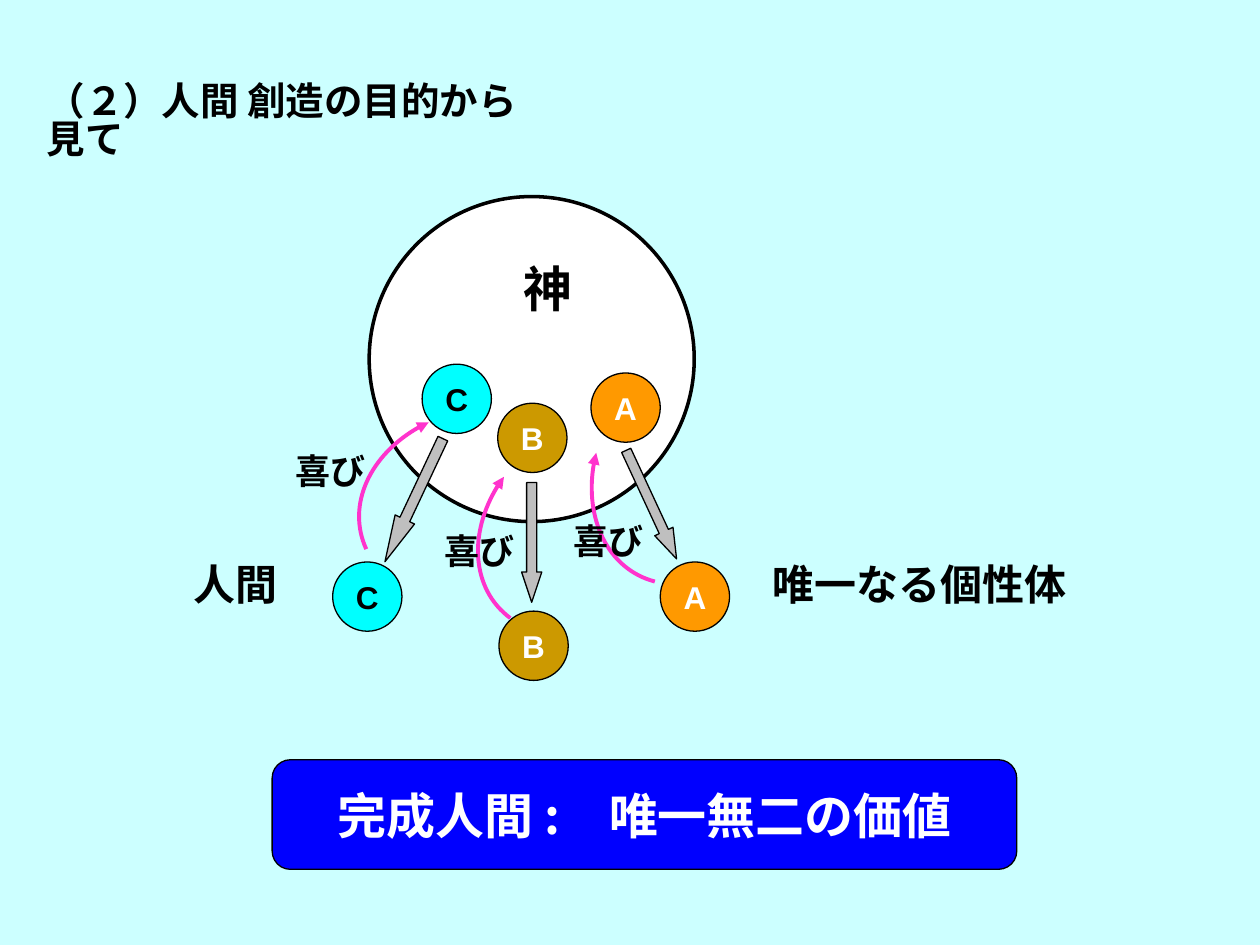
from lxml import etree
from pptx import Presentation
from pptx.dml.color import RGBColor
from pptx.enum.shapes import MSO_SHAPE as Preset
from pptx.enum.text import MSO_ANCHOR as Anchor, MSO_AUTO_SIZE as AutoSize, PP_ALIGN as Align
from pptx.oxml.ns import qn
from pptx.util import Inches, Pt

COLUMNS, ROWS = 100, 75
JAPANESE, LATIN = "Noto Sans CJK JP", "Arial"


def color(value):
    return RGBColor.from_string(value)


def write(shape, text, size=20, font=JAPANESE, ink="000000", align=Align.LEFT,
          anchor=Anchor.TOP, wrap=True, spacing=None):
    frame = shape.text_frame
    frame.auto_size = AutoSize.NONE
    frame.word_wrap = wrap
    frame.vertical_anchor = anchor
    paragraph = frame.paragraphs[0]
    paragraph.alignment = align
    paragraph.line_spacing = spacing
    run = paragraph.add_run()
    run.text = text
    run.font.size = Pt(size)
    run.font.bold = True
    run.font.name = font
    run.font.color.rgb = color(ink)
    etree.SubElement(run.font._element, qn("a:ea")).set("typeface", font)


class Board:
    outline = "000000"
    arrow_fill = "BFBFBF"
    joy = "FF33CC"
    arc_size = (7.1, 8.7)
    arc_points = ((1, 1), (0.45, 1), (0, 0.55), (0, 0))

    def __init__(self, presentation, background):
        self.width = presentation.slide_width
        self.height = presentation.slide_height
        self.slide = presentation.slides.add_slide(presentation.slide_layouts[5])
        self.shapes = self.slide.shapes
        fill = self.slide.background.fill
        fill.solid()
        fill.fore_color.rgb = color(background)

    def place(self, column, row):
        return round(column * self.width / COLUMNS), round(row * self.height / ROWS)

    def box(self, column, row, columns, rows):
        return *self.place(column, row), *self.place(columns, rows)

    def title(self, text, *box, **style):
        title = self.shapes.title
        title.left, title.top, title.width, title.height = self.box(*box)
        write(title, text, **style)

    def label(self, text, *box, **style):
        write(self.shapes.add_textbox(*self.box(*box)), text, **style)

    def shape(self, preset, fill, *box, line=0.75, adjustments=(), rotation=0):
        shape = self.shapes.add_shape(preset, *self.box(*box))
        shape.shadow.inherit = False
        shape.fill.solid()
        shape.fill.fore_color.rgb = color(fill)
        shape.line.color.rgb = color(self.outline)
        shape.line.width = Pt(line)
        shape.rotation = rotation
        for index, value in enumerate(adjustments):
            shape.adjustments[index] = value
        return shape

    def person(self, name, fill, ink, column, row):
        circle = self.shape(Preset.OVAL, fill, column, row, 5.5, 5.5)
        write(circle, name, size=18, font=LATIN, ink=ink, align=Align.CENTER,
              anchor=Anchor.MIDDLE, wrap=False)

    def arrow(self, *box, head, rotation):
        self.shape(Preset.DOWN_ARROW, self.arrow_fill, *box,
                   adjustments=(0.5, head), rotation=rotation)

    def arc(self, column, row, rotation):
        columns, rows = self.arc_size
        start, *controls = [self.place(column + x * columns, row + y * rows)
                            for x, y in self.arc_points]
        builder = self.shapes.build_freeform(*start)
        builder.add_line_segments(controls, close=False)
        arc = builder.convert_to_shape()
        segments = list(arc._element.iter(qn("a:lnTo")))
        curve = etree.SubElement(segments[0].getparent(), qn("a:cubicBezTo"))
        for segment in segments:
            curve.append(segment[0])
            segment.getparent().remove(segment)
        arc.shadow.inherit = False
        arc.fill.background()
        arc.line.color.rgb = color(self.joy)
        arc.line.width = Pt(2.25)
        etree.SubElement(arc.line._get_or_add_ln(), qn("a:tailEnd")).set("type", "triangle")
        arc.rotation = rotation


def main():
    presentation = Presentation()
    presentation.slide_width, presentation.slide_height = Inches(10), Inches(7.5)
    board = Board(presentation, "CCFFFF")

    board.title("（２）人間 創造の目的から見て", 2.7, 6.2, 41, 8.4, size=22, spacing=0.83)
    board.shape(Preset.OVAL, "FFFFFF", 29.3, 15.6, 25.8, 25.8, line=2)
    board.label("唯一なる個性体", 60.3, 43.8, 27.5, 5, size=24)
    board.label("　神", 36.7, 20, 13.9, 5.7, size=28)
    board.label("人間", 14.4, 43.8, 11.2, 5, size=24)

    banner = board.shape(Preset.ROUNDED_RECTANGLE, "0000FF", 21.6, 60.3, 59.1, 8.7,
                         adjustments=(0.167,))
    write(banner, "完成人間 :　唯一無二の価値", size=28, ink="FFFFFF", align=Align.CENTER,
          anchor=Anchor.MIDDLE, wrap=False)

    people = (
        ("C", "00FFFF", "000000", (33.5, 28.9), (26.4, 44.6)),
        ("B", "CC9900", "FFFFFF", (39.5, 32), (39.6, 48.5)),
        ("A", "FF9900", "FFFFFF", (46.9, 29.6), (52.4, 44.6)),
    )
    for name, fill, ink, *places in people:
        for place in places:
            board.person(name, fill, ink, *place)

    board.arrow(32, 34.3, 1.7, 10.8, head=2.18, rotation=25.2)
    board.arrow(50.9, 35.3, 1.6, 9.5, head=1.5, rotation=335.1)
    board.arrow(41.4, 38.3, 1.6, 9.5, head=1.5, rotation=0)

    joys = (
        ((28, 34.2), 65.4, (22.5, 35.2)),
        ((36.7, 39.1), 36.6, (34.3, 41.5)),
        ((46.1, 36.7), 14.7, (44.5, 40.7)),
    )
    for arc, rotation, label in joys:
        board.arc(*arc, rotation)
        board.label("喜び", *label, 8.7, 4.3)

    presentation.save("out.pptx")


if __name__ == "__main__":
    main()
